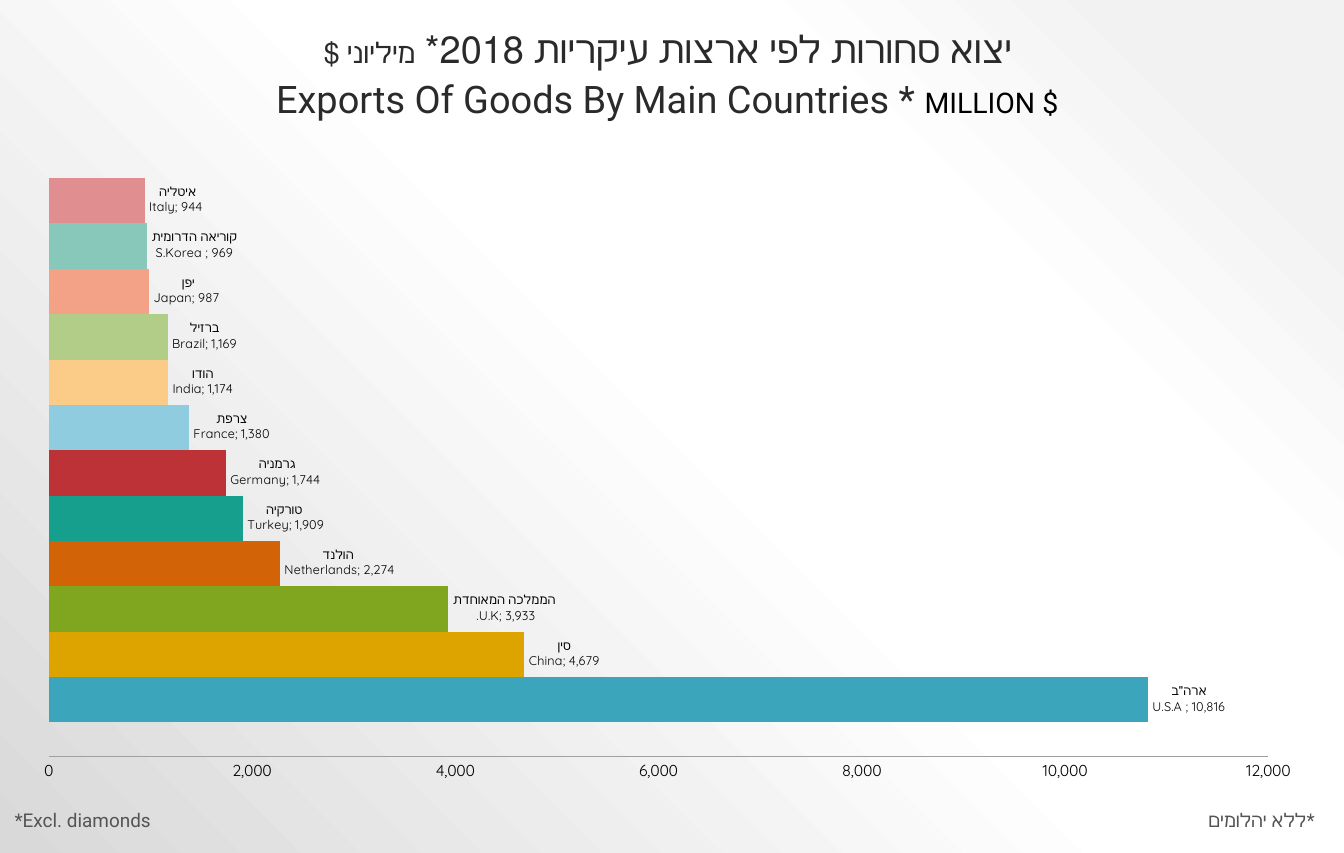
"""Builds the slide of 2018 goods exports by main country."""
from dataclasses import dataclass
from typing import NamedTuple

from lxml.etree import SubElement
from pptx import Presentation
from pptx.chart.data import CategoryChartData
from pptx.chart.series import BarSeries
from pptx.dml.color import RGBColor
from pptx.enum.chart import XL_CHART_TYPE as ChartType
from pptx.enum.chart import XL_LABEL_POSITION as LabelPosition
from pptx.enum.chart import XL_TICK_MARK as TickMark
from pptx.enum.text import MSO_ANCHOR as Anchor
from pptx.enum.text import PP_ALIGN as Align
from pptx.oxml import parse_xml
from pptx.oxml.ns import nsdecls, qn
from pptx.slide import Slide
from pptx.text.text import Font
from pptx.util import Cm, Pt

WIDTH, HEIGHT = Cm(30), Cm(19.05)
COLUMN, ROW = WIDTH / 100, HEIGHT / 100


@dataclass(frozen=True)
class Theme:
    heading_font: str = "Roboto"
    chart_font: str = "Quicksand"
    ink: str = "2A2A2A"
    muted: str = "545454"
    black: str = "000000"
    axis: str = "A0A0A0"
    title: int = 24
    unit: int = 18
    note: int = 12
    tick: int = 10
    label: int = 8
    backdrop: tuple = ((10, "F2F2F2"), (28, "FFFFFF"), (48, "FFFFFF"), (100, "D9D9D9"))


THEME = Theme()


class Area(NamedTuple):
    """A place on the slide, in columns and rows of a 100 by 100 grid."""
    column: float
    row: float
    columns: float
    rows: float

    def emu(self) -> tuple[int, ...]:
        steps = (COLUMN, ROW, COLUMN, ROW)
        return tuple(round(count * step) for count, step in zip(self, steps))


class Phrase(NamedTuple):
    text: str
    size: int
    color: str


class Caption(NamedTuple):
    area: Area
    phrases: tuple[Phrase, ...]
    align: Align
    anchor: Anchor = Anchor.TOP
    spacing: float = 1.0
    rtl: bool = False


class Country(NamedTuple):
    hebrew: str
    english: str
    exports: int
    color: str


CAPTIONS = (
    Caption(Area(10, 9.07, 80, 5.87),
            (Phrase("Exports Of Goods By Main Countries * ", THEME.title, THEME.ink),
             Phrase("MILLION $", THEME.unit, THEME.black),
             Phrase(" ", THEME.title, THEME.ink)),
            Align.CENTER, Anchor.BOTTOM, 0.9),
    Caption(Area(11.35, 2.93, 76.7, 6.13),
            (Phrase("יצוא סחורות לפי ארצות עיקריות 2018* ", THEME.title, THEME.ink),
             Phrase("מיליוני $", THEME.unit, THEME.ink)),
            Align.CENTER, spacing=0.9, rtl=True),
    Caption(Area(84, 94.13, 15, 4),
            (Phrase("ללא יהלומים* ", THEME.note, THEME.muted),), Align.RIGHT),
    Caption(Area(0.25, 94.13, 14.56, 4),
            (Phrase("*Excl. diamonds", THEME.note, THEME.muted),), Align.LEFT),
)

COUNTRIES = (
    Country('ארה"ב', "U.S.A ", 10816, "3AA5BB"),
    Country("סין", "China", 4679, "DDA400"),
    Country("הממלכה המאוחדת ", ".U.K", 3933, "80A620"),
    Country("הולנד ", "Netherlands", 2274, "D36307"),
    Country("טורקיה ", "Turkey", 1909, "179F8D"),
    Country(" גרמניה", "Germany", 1744, "BD3237"),
    Country("צרפת", "France", 1380, "90CCDF"),
    Country("הודו", "India", 1174, "FBCC88"),
    Country("ברזיל", "Brazil", 1169, "B2CD88"),
    Country(" יפן", "Japan", 987, "F3A287"),
    Country("קוריאה הדרומית", "S.Korea ", 969, "88C8BB"),
    Country(" איטליה", "Italy", 944, "E08E90"),
)

CHART_AREA = Area(1.4, 15.33, 96.75, 77.73)
PLOT_SHARES = {"x": 0.023, "y": 0.02, "w": 0.938, "h": 0.924}


def style_font(font: Font, name: str, size: int, color: str) -> None:
    font.name, font.size = name, Pt(size)
    font.color.rgb = RGBColor.from_string(color)


def paint_backdrop(slide: Slide) -> None:
    stops = "".join(f'<a:gs pos="{share * 1000}"><a:srgbClr val="{color}"/></a:gs>'
                    for share, color in THEME.backdrop)
    slide.element.cSld.insert(0, parse_xml(
        f'<p:bg {nsdecls("p", "a")}><p:bgPr><a:gradFill rotWithShape="1">'
        f'<a:gsLst>{stops}</a:gsLst><a:path path="circle">'
        '<a:fillToRect l="100000" b="100000"/></a:path></a:gradFill>'
        '<a:effectLst/></p:bgPr></p:bg>'))


def add_caption(slide: Slide, caption: Caption) -> None:
    frame = slide.shapes.add_textbox(*caption.area.emu()).text_frame
    frame.word_wrap = True
    frame.vertical_anchor = caption.anchor
    line = frame.paragraphs[0]
    line.alignment, line.line_spacing = caption.align, caption.spacing
    if caption.rtl:
        line._p.get_or_add_pPr().set("rtl", "1")
    if len(caption.phrases) == 1:
        phrase = caption.phrases[0]
        line.text = phrase.text
        style_font(line.font, THEME.heading_font, phrase.size, phrase.color)
        return
    for phrase in caption.phrases:
        run = line.add_run()
        run.text = phrase.text
        style_font(run.font, THEME.heading_font, phrase.size, phrase.color)


def style_bar(bar: BarSeries, country: Country) -> None:
    bar.format.fill.solid()
    bar.format.fill.fore_color.rgb = RGBColor.from_string(country.color)
    labels = bar.data_labels
    labels.show_value = labels.show_series_name = True
    labels.number_format, labels.number_format_is_linked = "#,##0", False
    labels.position = LabelPosition.OUTSIDE_END
    style_font(labels.font, THEME.chart_font, THEME.label, THEME.black)
    separator = SubElement(labels._element, qn("c:separator"))
    separator.text = "; "
    labels._element.find(qn("c:showBubbleSize")).addnext(separator)


def add_exports_chart(slide: Slide) -> None:
    exports = CategoryChartData(number_format="#,##0")
    exports.categories = ["1"]
    for country in COUNTRIES:
        exports.add_series(f"{country.hebrew}\n{country.english}", [country.exports])
    chart = slide.shapes.add_chart(
        ChartType.BAR_CLUSTERED, *CHART_AREA.emu(), exports).chart
    chart.has_legend = chart.has_title = False
    style_font(chart.font, THEME.chart_font, THEME.label, THEME.muted)

    plot = chart.plots[0]
    plot.gap_width, plot.overlap, plot.vary_by_categories = 150, 0, False
    for bar, country in zip(plot.series, COUNTRIES):
        style_bar(bar, country)

    chart.category_axis.visible = False
    scale = chart.value_axis
    scale.minimum_scale, scale.maximum_scale, scale.major_unit = 0, 12000, 2000
    scale.has_major_gridlines = False
    scale.major_tick_mark = scale.minor_tick_mark = TickMark.NONE
    scale.tick_labels.number_format = "#,##0"
    scale.tick_labels.number_format_is_linked = False
    style_font(scale.tick_labels.font, THEME.chart_font, THEME.tick, THEME.black)
    scale.format.line.color.rgb = RGBColor.from_string(THEME.axis)
    scale.format.line.width = Pt(0.75)

    shares = "".join(f'<c:{side} val="{share}"/>' for side, share in PLOT_SHARES.items())
    plot_area = chart._chartSpace.chart.plotArea
    for automatic in plot_area.findall(qn("c:layout")):
        plot_area.remove(automatic)
    plot_area.insert(0, parse_xml(
        f'<c:layout {nsdecls("c")}><c:manualLayout><c:layoutTarget val="inner"/>'
        f'<c:xMode val="edge"/><c:yMode val="edge"/>{shares}</c:manualLayout></c:layout>'))


def main() -> None:
    deck = Presentation()
    deck.slide_width, deck.slide_height = WIDTH, HEIGHT
    slide = deck.slides.add_slide(deck.slide_layouts[6])
    paint_backdrop(slide)
    add_exports_chart(slide)
    for caption in CAPTIONS:
        add_caption(slide, caption)
    deck.save("out.pptx")


if __name__ == "__main__":
    main()
